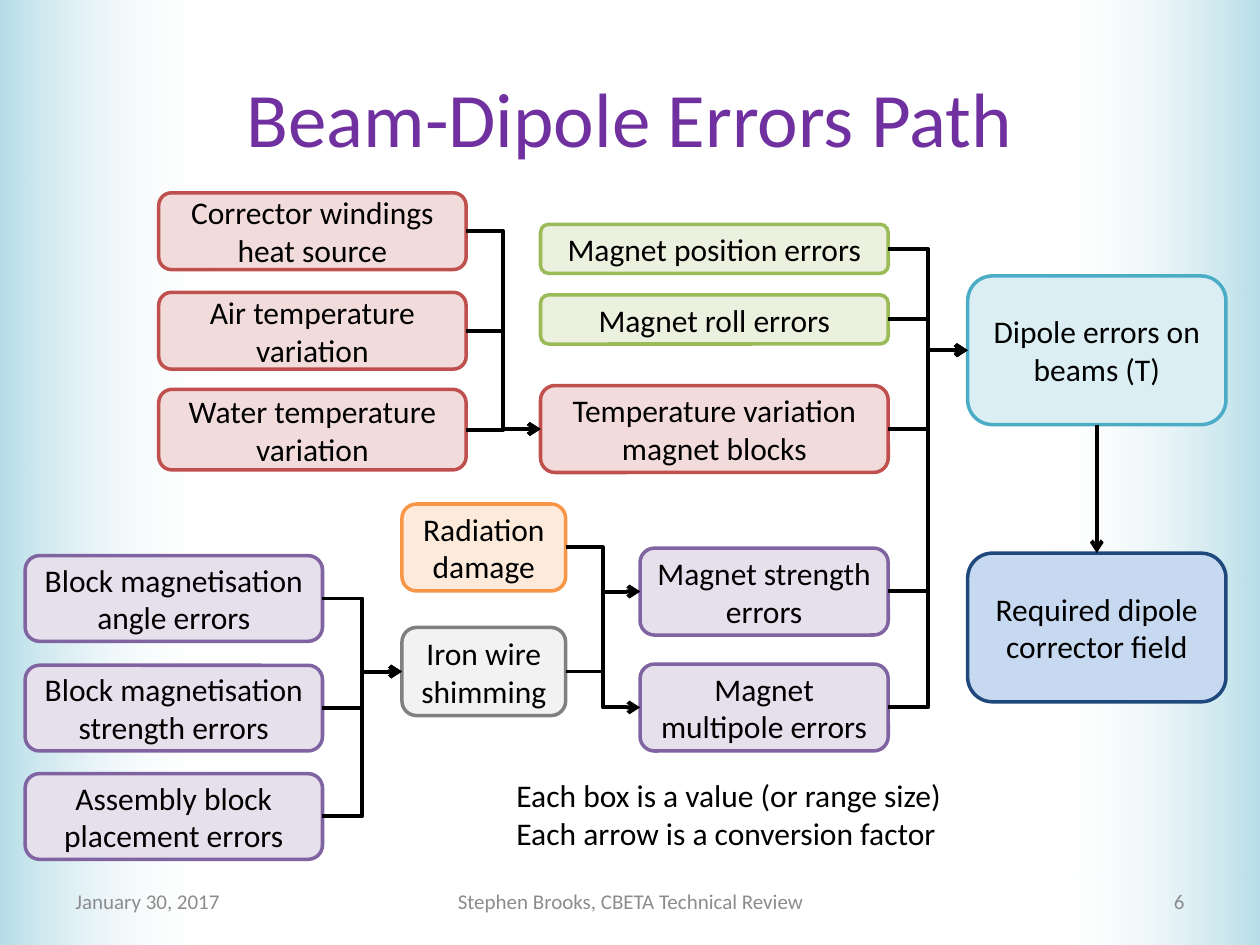
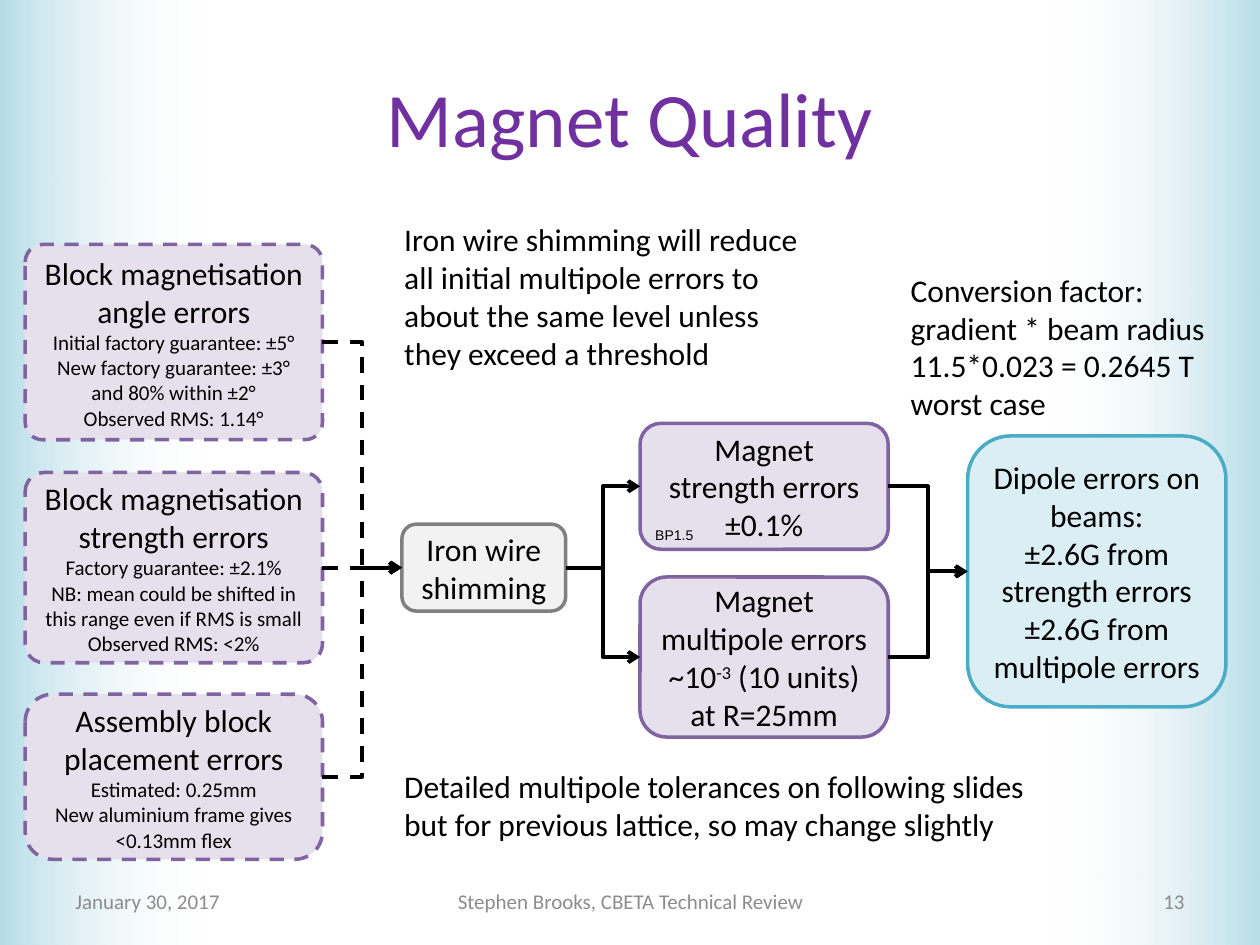
from lxml import etree
from pptx import Presentation
from pptx.dml.color import RGBColor
from pptx.enum.dml import MSO_LINE
from pptx.enum.shapes import MSO_CONNECTOR, MSO_SHAPE
from pptx.enum.text import MSO_ANCHOR, PP_ALIGN
from pptx.oxml.ns import qn
from pptx.util import Inches, Pt

RECT, ROUND = MSO_SHAPE.RECTANGLE, MSO_SHAPE.ROUNDED_RECTANGLE
STRAIGHT, ELBOW = MSO_CONNECTOR.STRAIGHT, MSO_CONNECTOR.ELBOW
LEFT, CENTER, RIGHT = PP_ALIGN.LEFT, PP_ALIGN.CENTER, PP_ALIGN.RIGHT
TOP, MIDDLE = MSO_ANCHOR.TOP, MSO_ANCHOR.MIDDLE
DASH = MSO_LINE.DASH
SITE_TOP, SITE_LEFT, SITE_BOTTOM, SITE_RIGHT = range(4)

WIDTH, HEIGHT, BAND, MARGIN = 10, 7.5, 1.69, 0.5
BLACK = RGBColor(0x00, 0x00, 0x00)
WHITE = RGBColor(0xFF, 0xFF, 0xFF)
GREY = RGBColor(0x8C, 0x8C, 0x8C)
PURPLE = RGBColor(0x70, 0x30, 0xA0)
AQUA = RGBColor(0xB7, 0xDE, 0xE8)

# Box kind: (fill, outline)
KINDS = {
    "beam": (RGBColor(0xDB, 0xEE, 0xF4), RGBColor(0x4B, 0xAC, 0xC6)),
    "corrector": (RGBColor(0xC6, 0xD9, 0xF1), RGBColor(0x1F, 0x49, 0x7D)),
    "alignment": (RGBColor(0xEB, 0xF1, 0xDE), RGBColor(0x9B, 0xBB, 0x59)),
    "thermal": (RGBColor(0xF2, 0xDC, 0xDB), RGBColor(0xC0, 0x50, 0x4D)),
    "magnetic": (RGBColor(0xE6, 0xE0, 0xEC), RGBColor(0x80, 0x64, 0xA2)),
    "radiation": (RGBColor(0xFD, 0xEA, 0xDA), RGBColor(0xF7, 0x96, 0x46)),
    "shimming": (RGBColor(0xF2, 0xF2, 0xF2), RGBColor(0x80, 0x80, 0x80)),
}

# Column: (left, width)
COLUMNS = {
    "block": (0.2, 2.36),
    "source": (1.26, 2.44),
    "process": (3.19, 1.3),
    "effect": (4.29, 2.76),
    "magnet": (5.08, 1.97),
    "result": (7.68, 2.05),
}

DATE = "January 30, 2017"
FOOTER = "Stephen Brooks, CBETA Technical Review"

# boxes: key: (column, top, height, kind, paragraphs, options)
# flows: (source keys, target keys, dashed)
# notes: (left, top, width, height, paragraphs, options)
SLIDES = [
    {
        "title": "Beam-Dipole Errors Path",
        "number": "6",
        "boxes": {
            "windings": ("source", 1.53, 0.61, "thermal", ["Corrector windings heat source"], {}),
            "air": ("source", 2.32, 0.61, "thermal", ["Air temperature variation"], {}),
            "water": ("source", 3.09, 0.64, "thermal", ["Water temperature variation"], {}),
            "position": ("effect", 1.78, 0.39, "alignment", ["Magnet position errors"], {}),
            "roll": ("effect", 2.34, 0.39, "alignment", ["Magnet roll errors"], {}),
            "temperature": ("effect", 3.06, 0.69, "thermal",
                            ["Temperature variation magnet blocks"], {}),
            "radiation": ("process", 4, 0.69, "radiation", ["Radiation damage"], {}),
            "shimming": ("process", 4.98, 0.7, "shimming", ["Iron wire shimming"], {}),
            "strength": ("magnet", 4.35, 0.69, "magnetic", ["Magnet strength errors"], {}),
            "multipole": ("magnet", 5.27, 0.69, "magnetic", ["Magnet multipole errors"], {}),
            "angle": ("block", 4.41, 0.68, "magnetic", ["Block magnetisation angle errors"], {}),
            "block": ("block", 5.28, 0.68, "magnetic", ["Block magnetisation strength errors"], {}),
            "assembly": ("block", 6.14, 0.68, "magnetic", ["Assembly block placement errors"], {}),
            "dipole": ("result", 2.19, 1.18, "beam", ["Dipole errors on beams (T)"], {}),
            "field": ("result", 4.39, 1.18, "corrector", ["Required dipole corrector field"], {}),
        },
        "flows": [
            (["windings", "air", "water"], ["temperature"], False),
            (["position", "roll", "temperature", "strength", "multipole"], ["dipole"], False),
            (["angle", "block", "assembly"], ["shimming"], False),
            (["shimming"], ["strength", "multipole"], False),
            (["radiation"], ["strength"], False),
            (["dipole"], ["field"], False),
        ],
        "notes": [
            (4, 6.11, 3.61, 0.71, ["Each box is a value (or range size)",
                                   "Each arrow is a conversion factor"], {"wrap": False}),
        ],
    },
    {
        "title": "Magnet Quality",
        "number": "13",
        "boxes": {
            "angle": ("block", 1.94, 1.55, "magnetic", ["Block magnetisation angle errors"], {
                "details": ["Initial factory guarantee: ±5°",
                            "New factory guarantee: ±3° and 80% within ±2°",
                            "Observed RMS: 1.14°"],
                "corner": 0.09, "dashed": True}),
            "block": ("block", 3.75, 1.51, "magnetic", ["Block magnetisation strength errors"], {
                "details": ["Factory guarantee: ±2.1%",
                            "NB: mean could be shifted in this range even if RMS is small",
                            "Observed RMS: <2%"],
                "corner": 0.1, "dashed": True}),
            "assembly": ("block", 5.51, 1.31, "magnetic", ["Assembly block placement errors"], {
                "details": ["Estimated: 0.25mm", "New aluminium frame gives <0.13mm flex"],
                "dashed": True}),
            "shimming": ("process", 4.16, 0.69, "shimming", ["Iron wire shimming"], {}),
            "strength": ("magnet", 3.36, 1, "magnetic", ["Magnet strength errors", "±0.1%"], {}),
            "multipole": ("magnet", 4.58, 1.27, "magnetic",
                          ["Magnet multipole errors", "~10^-3^ (10 units) at R=25mm"], {}),
            "dipole": ("result", 3.46, 2.15, "beam",
                       ["Dipole errors on beams:", "±2.6G from strength errors",
                        "±2.6G from multipole errors"], {}),
        },
        "flows": [
            (["angle", "block", "assembly"], ["shimming"], True),
            (["shimming"], ["strength", "multipole"], False),
            (["strength", "multipole"], ["dipole"], False),
        ],
        "notes": [
            (3.11, 1.7, 3.39, 1.31, ["Iron wire shimming will reduce all initial multipole errors "
                                     "to about the same level unless they exceed a threshold"], {}),
            (3.11, 6.04, 5.46, 0.71, ["Detailed multipole tolerances on following slides "
                                      "but for previous lattice, so may change slightly"], {}),
            (7.13, 2.1, 2.6, 1.31, ["Conversion factor:", "gradient * beam radius",
                                    "11.5*0.023 = 0.2645 T worst case"], {}),
            (5.16, 4.14, 0.39, 0.21, ["BP1.5"],
             {"size": 8, "font": "Arial", "inset": 0.04, "wrap": False}),
        ],
    },
]


def write(tf, lines, details=(), size=18, detail_size=12, font="Calibri", color=BLACK,
          align=LEFT, anchor=TOP, wrap=True, inset=None):
    """Fill a text frame; text between two carets is superscript."""
    tf.word_wrap = wrap
    tf.vertical_anchor = anchor
    if inset is not None:
        tf.margin_left = tf.margin_right = tf.margin_top = tf.margin_bottom = Inches(inset)
    sized = [(t, size) for t in lines] + [(t, detail_size) for t in details]
    for i, (text, points) in enumerate(sized):
        p = tf.add_paragraph() if i else tf.paragraphs[0]
        p.alignment = align
        for j, part in enumerate(text.split("^")):
            r = p.add_run()
            r.text = part
            r.font.name, r.font.size = font, Pt(points)
            r.font.color.rgb = color
            if j % 2:
                r.font._element.set("baseline", "30000")


def add_note(s, left, top, width, height, lines, **fmt):
    sp = s.shapes.add_textbox(*map(Inches, (left, top, width, height)))
    write(sp.text_frame, lines, **fmt)


def add_band(s, left, rotation):
    """Side band fading from aqua at the slide edge to clear."""
    sp = s.shapes.add_shape(RECT, Inches(left), 0, Inches(BAND), Inches(HEIGHT))
    sp.shadow.inherit = False
    sp.line.fill.background()
    sp.rotation = rotation
    sp.fill.gradient()
    sp.fill.gradient_angle = 0
    for stop, color in zip(sp.fill.gradient_stops, (AQUA, WHITE)):
        stop.color.rgb = color
    clear = list(sp._element.iter(qn("a:srgbClr")))[-1]
    etree.SubElement(clear, qn("a:alpha"), val="0")


def add_frame(s, title, number):
    add_band(s, WIDTH - BAND, 180)
    add_band(s, 0, 0)
    add_note(s, MARGIN, 0.3, WIDTH - 2 * MARGIN, 1.25, [title],
             size=44, color=PURPLE, align=CENTER, anchor=MIDDLE)
    for left, width, text, align in [
        (MARGIN, 2.33, DATE, LEFT),
        (3.42, 3.17, FOOTER, CENTER),
        (WIDTH - MARGIN - 2.33, 2.33, number, RIGHT),
    ]:
        add_note(s, left, 6.95, width, 0.4, [text],
                 size=12, color=GREY, align=align, anchor=MIDDLE)


def add_box(s, column, top, height, kind, lines, details=(), corner=None, dashed=False):
    left, width = COLUMNS[column]
    sp = s.shapes.add_shape(ROUND, *map(Inches, (left, top, width, height)))
    sp.shadow.inherit = False
    if corner:
        sp.adjustments[0] = corner
    fill, outline = KINDS[kind]
    sp.fill.solid()
    sp.fill.fore_color.rgb = fill
    sp.line.color.rgb = outline
    sp.line.width = Pt(2)
    if dashed:
        sp.line.dash_style = DASH
    write(sp.text_frame, lines, details, align=CENTER, anchor=MIDDLE)
    return sp


def add_arrow(s, source, target, dashed):
    """Join boxes sideways, or downwards when they share a column."""
    stacked = source.left == target.left
    c = s.shapes.add_connector(STRAIGHT if stacked else ELBOW, 0, 0, 0, 0)
    c.begin_connect(source, SITE_BOTTOM if stacked else SITE_RIGHT)
    c.end_connect(target, SITE_TOP if stacked else SITE_LEFT)
    c.line.color.rgb = BLACK
    c.line.width = Pt(2.25)
    if dashed:
        c.line.dash_style = DASH
    etree.SubElement(c.line._get_or_add_ln(), qn("a:tailEnd"), type="arrow")
    etree.SubElement(c._element.spPr, qn("a:effectLst"))


def main():
    prs = Presentation()
    prs.slide_width, prs.slide_height = Inches(WIDTH), Inches(HEIGHT)
    for content in SLIDES:
        s = prs.slides.add_slide(prs.slide_layouts[6])
        add_frame(s, content["title"], content["number"])
        boxes = {key: add_box(s, *spec, **options)
                 for key, (*spec, options) in content["boxes"].items()}
        for sources, targets, dashed in content["flows"]:
            for source in sources:
                for target in targets:
                    add_arrow(s, boxes[source], boxes[target], dashed)
        for *spec, options in content["notes"]:
            add_note(s, *spec, **options)
    prs.save("out.pptx")


if __name__ == "__main__":
    main()
